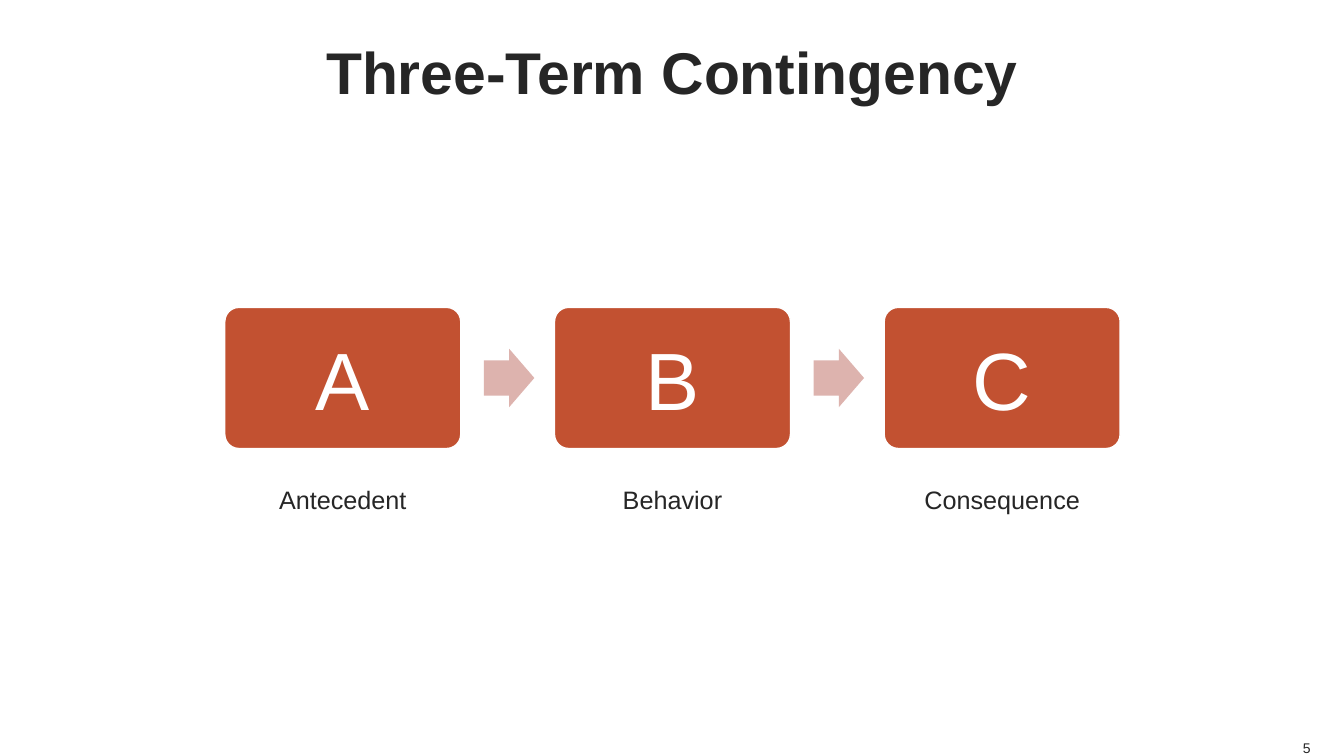
"""Build the Three-Term Contingency slide."""
from dataclasses import dataclass

from pptx import Presentation
from pptx import util as u
from pptx.dml.color import RGBColor
from pptx.enum import shapes, text

PX = 9144


@dataclass(frozen=True)
class Theme:
    font: str = "Arial"
    ink: str = "262626"
    white: str = "FFFFFF"
    card: str = "C25131"
    arrow: str = "DDB3AE"
    title: int = 42
    letter: int = 58
    caption: int = 18
    number: int = 10


T = Theme()
TERMS = [("A", "Antecedent"), ("B", "Behavior"), ("C", "Consequence")]
LEFT, TOP, CARD_W, CARD_H, PITCH = 223, 305, 234, 140, 327
ARROW_W, ARROW_H, ARROW_GAP = 50, 58, 23
CAPTION_W, CAPTION_H, CAPTION_TOP = 176, 40, 476


def px(*lengths):
    return [u.Emu(n * PX) for n in lengths]


def write(sp, words, size, color=T.ink, bold=False, align="CENTER", anchor="MIDDLE", wrap=True):
    tf = sp.text_frame
    tf.word_wrap = wrap
    tf.vertical_anchor = text.MSO_ANCHOR[anchor]
    tf.margin_left = tf.margin_top = tf.margin_right = tf.margin_bottom = 0
    p = tf.paragraphs[0]
    p.alignment = text.PP_ALIGN[align]
    r = p.add_run()
    r.text = words
    r.font.name, r.font.size, r.font.bold = T.font, u.Pt(size), bold
    r.font.color.rgb = RGBColor.from_string(color)


def add_label(s, box, words, size, **fmt):
    write(s.shapes.add_textbox(*px(*box)), words, size, **fmt)


def add_block(s, kind, box, fill, adjustments, line=None):
    sp = s.shapes.add_shape(kind, *px(*box))
    sp.shadow.inherit = False
    sp.fill.solid()
    sp.fill.fore_color.rgb = RGBColor.from_string(fill)
    for i, value in enumerate(adjustments):
        sp.adjustments[i] = value
    if line:
        sp.line.color.rgb = RGBColor.from_string(line)
        sp.line.width = u.Pt(1)
    else:
        sp.line.fill.background()
    return sp


def add_term(s, x, letter, caption):
    card = add_block(s, shapes.MSO_SHAPE.ROUNDED_RECTANGLE, (x, TOP, CARD_W, CARD_H),
                     T.card, [0.1], line=T.white)
    write(card, letter, T.letter, color=T.white)
    caption_x = x + (CARD_W - CAPTION_W) // 2
    add_label(s, (caption_x, CAPTION_TOP, CAPTION_W, CAPTION_H), caption, T.caption)


def add_arrow(s, x):
    y = TOP + (CARD_H - ARROW_H) // 2
    add_block(s, shapes.MSO_SHAPE.RIGHT_ARROW, (x, y, ARROW_W, ARROW_H), T.arrow, [0.6, 0.5])


def main():
    prs = Presentation()
    prs.slide_width, prs.slide_height = px(1333, 750)
    s = prs.slides.add_slide(prs.slide_layouts[6])
    add_label(s, (50, 0, 1233, 140), "Three-Term Contingency", T.title, bold=True)
    for i, (letter, caption) in enumerate(TERMS):
        x = LEFT + i * PITCH
        if i:
            add_arrow(s, x - PITCH + CARD_W + ARROW_GAP)
        add_term(s, x, letter, caption)
    add_label(s, (1283, 733, 17, 17), "5", T.number, align="RIGHT", anchor="BOTTOM", wrap=False)
    prs.save("out.pptx")


if __name__ == "__main__":
    main()
